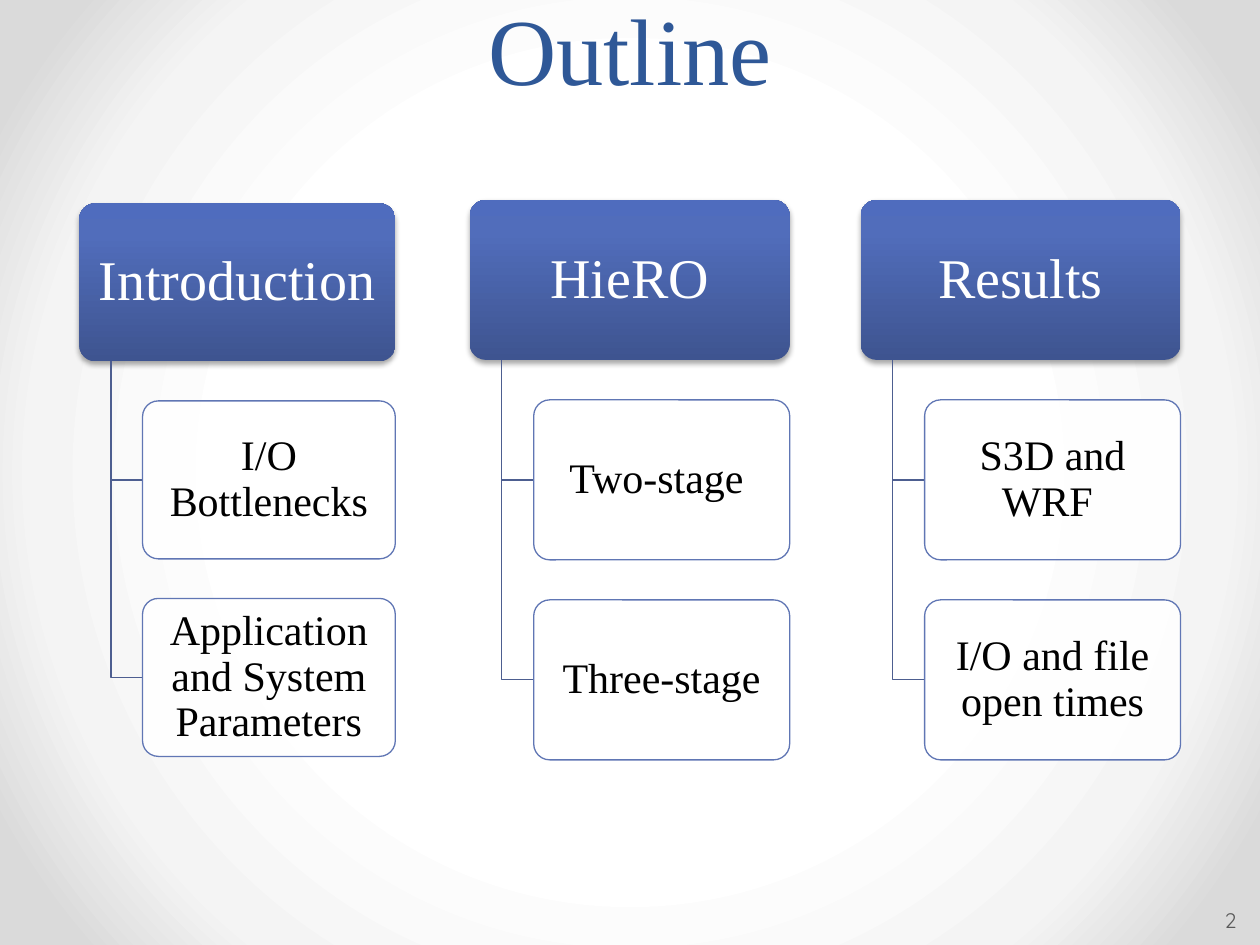
from dataclasses import dataclass

from lxml import etree
from pptx import Presentation
from pptx import util as u
from pptx.dml.color import RGBColor
from pptx.enum import shapes, text
from pptx.oxml.ns import qn

SERIF = "Times New Roman"


@dataclass
class Branch:
    """A heading with its topics; every size follows from the width."""
    left: float
    top: float
    width: float
    heading: str
    topics: tuple[str, ...]


BRANCHES = [
    Branch(1.6, 4.1, 6.37, "Introduction",
           ("I/O Bottlenecks", "Application and System Parameters")),
    Branch(9.47, 4.03, 6.45, "HieRO", ("Two-stage ", "Three-stage")),
    Branch(17.35, 4.03, 6.45, "Results",
           ("S3D and WRF ", "I/O and file open times")),
]


def rgb(color: str) -> RGBColor:
    return RGBColor.from_string(color)


def add_xml(parent, tag: str, **attributes):
    return etree.SubElement(parent, qn(tag),
                            {key: str(val) for key, val in attributes.items()})


def set_gradient(element, stops: list[tuple[int, str]]):
    """Replace the stops of the gradient in element; return it without direction."""
    gradient = next(element.iter(qn("a:gradFill")))
    for child in list(gradient):
        gradient.remove(child)
    stop_list = add_xml(gradient, "a:gsLst")
    for percent, color in stops:
        stop = add_xml(stop_list, "a:gs", pos=percent * 1000)
        add_xml(stop, "a:srgbClr", val=color)
    return gradient


def write(frame, words: str, size: float, color: str, font: str = SERIF,
          align=text.PP_ALIGN.CENTER, anchor=text.MSO_ANCHOR.MIDDLE,
          spacing=0.9, margins: tuple[float, float] = (0.12, 0.08)) -> None:
    frame.word_wrap = True
    frame.vertical_anchor = anchor
    frame.margin_left = frame.margin_right = u.Cm(margins[0])
    frame.margin_top = frame.margin_bottom = u.Cm(margins[1])
    paragraph = frame.paragraphs[0]
    paragraph.text = words
    paragraph.alignment = align
    paragraph.line_spacing = spacing
    paragraph.font.name = font
    paragraph.font.size = u.Pt(size)
    paragraph.font.color.rgb = rgb(color)


def add_box(group, left: float, top: float, width: float, height: float):
    box = group.shapes.add_shape(shapes.MSO_SHAPE.ROUNDED_RECTANGLE,
                                 u.Cm(left), u.Cm(top), u.Cm(width), u.Cm(height))
    box.adjustments[0] = 0.1
    box.shadow.inherit = False
    return box


def add_heading(group, branch: Branch, height: float) -> None:
    box = add_box(group, branch.left, branch.top, branch.width, height)
    box.fill.gradient()
    gradient = set_gradient(box._element,
                            [(0, "3E5490"), (80, "516DBB"), (100, "4F6CBE")])
    add_xml(gradient, "a:lin", ang=270 * 60000, scaled=0)
    box.line.fill.background()
    effects = box._element.spPr.find(qn("a:effectLst"))
    shadow = add_xml(effects, "a:outerShdw", blurRad=u.Pt(3.1), dist=u.Pt(1.8),
                     dir=90 * 60000, rotWithShape=0)
    add_xml(add_xml(shadow, "a:srgbClr", val="000000"), "a:alpha", val=35000)
    write(box.text_frame, branch.heading, 32, "FFFFFF", margins=(0.18, 0.1))


def add_elbow(group, left: float, top: float, right: float, bottom: float) -> None:
    builder = group.shapes.build_freeform(u.Cm(left), u.Cm(top))
    builder.add_line_segments([(u.Cm(left), u.Cm(bottom)),
                               (u.Cm(right), u.Cm(bottom))], close=False)
    elbow = builder.convert_to_shape()
    elbow.fill.background()
    elbow.line.color.rgb = rgb("4D5E90")
    elbow.line.width = u.Pt(0.75)
    elbow.shadow.inherit = False


def add_topic(group, topic: str, left: float, top: float,
              width: float, height: float) -> None:
    box = add_box(group, left, top, width, height)
    box.fill.solid()
    box.fill.fore_color.rgb = rgb("FFFFFF")
    white = box._element.spPr.find(qn("a:solidFill")).find(qn("a:srgbClr"))
    add_xml(white, "a:alpha", val=90000)
    box.line.color.rgb = rgb("6076B4")
    box.line.width = u.Pt(0.75)
    write(box.text_frame, topic, 24, "000000")


def add_branch(slide, branch: Branch) -> None:
    group = slide.shapes.add_group_shape()
    height = branch.width / 2
    step = height * 1.25
    spine = branch.left + branch.width * 0.1
    topic_left = branch.left + branch.width * 0.2
    add_heading(group, branch, height)
    for number, topic in enumerate(branch.topics, start=1):
        top = branch.top + number * step
        add_elbow(group, spine, branch.top + height, topic_left, top + height / 2)
        add_topic(group, topic, topic_left, top, branch.width * 0.8, height)


def main() -> None:
    deck = Presentation()
    deck.slide_width, deck.slide_height = u.Cm(25.4), u.Cm(19.05)
    slide = deck.slides.add_slide(deck.slide_layouts[6])

    # Background
    slide.background.fill.gradient()
    gradient = set_gradient(slide._element,
                            [(50, "FFFFFF"), (76, "F4F4F4"), (92, "DADADA")])
    circle = add_xml(gradient, "a:path", path="circle")
    add_xml(circle, "a:fillToRect", l=50000, t=50000, r=50000, b=50000)

    # Title
    title = slide.shapes.add_textbox(u.Cm(1.27), u.Cm(0), u.Cm(22.86), u.Cm(2.23))
    write(title.text_frame, "Outline", 54, "2F5897", spacing=u.Pt(58),
          anchor=text.MSO_ANCHOR.BOTTOM, margins=(0.25, 0.13))

    # Outline branches
    for branch in BRANCHES:
        add_branch(slide, branch)

    # Page number
    page = slide.shapes.add_textbox(u.Cm(24.59), u.Cm(18.03), u.Cm(0.86), u.Cm(1.02))
    write(page.text_frame, "2", 12, "595959", font="Quicksand", spacing=1.0,
          align=text.PP_ALIGN.LEFT, margins=(0.1, 0.13))

    deck.save("out.pptx")


if __name__ == "__main__":
    main()
